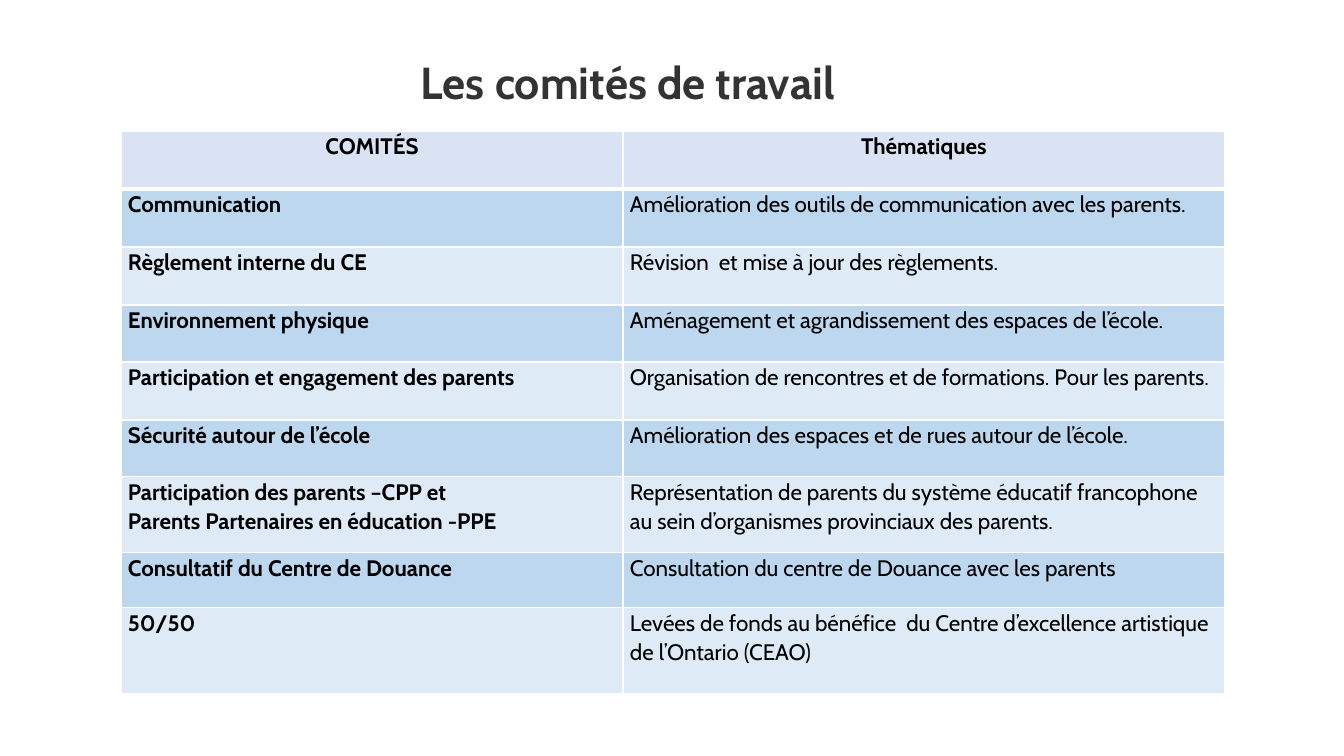
import pptx
import pptx.util
import pptx.dml.color
import pptx.enum.text
import pptx.oxml
import pptx.oxml.ns

PX = 9071.43  # EMU in one px, 100.8 px to the inch
ALIGN = pptx.enum.text.PP_ALIGN


def px(n):
    return pptx.util.Emu(round(n * PX))


def color(hex_value):
    return pptx.dml.color.RGBColor.from_string(hex_value)


class Deck:
    font = "Cabin"
    text_color = "000000"
    cell_size = 16
    line_spacing = 1.07
    cell_margin = 7
    border_color = "FFFFFF"

    def __init__(self, width, height):
        self.prs = pptx.Presentation()
        self.prs.slide_width, self.prs.slide_height = px(width), px(height)
        self.slide = self.prs.slides.add_slide(self.prs.slide_layouts[6])

    def run(self, p, text, size, bold, hex_value):
        r = p.add_run()
        r.text = text
        r.font.name = self.font
        r.font.size = pptx.util.Pt(size)
        r.font.bold = bold
        r.font.color.rgb = color(hex_value)

    def title(self, x, y, w, h, text, size, hex_value):
        sp = self.slide.shapes.add_textbox(px(x), px(y), px(w), px(h))
        tf = sp.text_frame
        tf.word_wrap = True
        tf.auto_size = pptx.enum.text.MSO_AUTO_SIZE.SHAPE_TO_FIT_TEXT
        p = tf.paragraphs[0]
        p.alignment = ALIGN.CENTER
        self.run(p, text, size, True, hex_value)

    def borders(self, cell, widths):
        tc_pr = cell._tc.get_or_add_tcPr()
        for i, (side, width) in enumerate(widths.items()):
            tc_pr.insert(i, pptx.oxml.parse_xml(
                f'<a:ln{side} {pptx.oxml.ns.nsdecls("a")} w="{pptx.util.Pt(width)}">'
                f'<a:solidFill><a:srgbClr val="{self.border_color}"/></a:solidFill>'
                f'</a:ln{side}>'))

    def cell(self, cell, text, fill, bold, align, top, bottom):
        cell.fill.solid()
        cell.fill.fore_color.rgb = color(fill)
        cell.margin_left = cell.margin_right = px(self.cell_margin)
        cell.margin_top = cell.margin_bottom = 0
        self.borders(cell, {"L": 1, "R": 1, "T": top, "B": bottom})
        tf = cell.text_frame
        for i, line in enumerate(text.split("\n")):
            p = tf.add_paragraph() if i else tf.paragraphs[0]
            p.alignment = align
            p.line_spacing = self.line_spacing
            self.run(p, line, self.cell_size, bold, self.text_color)

    def table(self, x, y, col_widths, row_heights, rows, header_fill, band_fills):
        frame = self.slide.shapes.add_table(
            len(rows), len(col_widths), px(x), px(y),
            px(sum(col_widths)), px(sum(row_heights)))
        table = frame.table
        for column, width in zip(table.columns, col_widths):
            column.width = px(width)
        for i, (texts, height) in enumerate(zip(rows, row_heights)):
            table.rows[i].height = px(height)
            header = i == 0
            fill = header_fill if header else band_fills[(i - 1) % 2]
            align = ALIGN.CENTER if header else ALIGN.LEFT
            for j, text in enumerate(texts):
                self.cell(table.cell(i, j), text, fill, header or j == 0, align,
                          top=3 if i == 1 else 1, bottom=3 if header else 1)


COMMITTEES = [
    ("COMITÉS", "Thématiques"),
    ("Communication", "Amélioration des outils de communication avec les parents."),
    ("Règlement interne du CE", "Révision  et mise à jour des règlements."),
    ("Environnement physique", "Aménagement et agrandissement des espaces de l’école."),
    ("Participation et engagement des parents",
     "Organisation de rencontres et de formations. Pour les parents."),
    ("Sécurité autour de l’école",
     "Amélioration des espaces et de rues autour de l’école."),
    ("Participation des parents –CPP et\nParents Partenaires en éducation -PPE",
     "Représentation de parents du système éducatif francophone "
     "au sein d’organismes provinciaux des parents."),
    ("Consultatif du Centre de Douance",
     "Consultation du centre de Douance avec les parents"),
    ("50/50",
     "Levées de fonds au bénéfice  du Centre d’excellence artistique "
     "de l’Ontario (CEAO)"),
]
ROW_HEIGHTS = [58, 58, 58, 57, 58, 57, 76, 55, 86]


def main():
    deck = Deck(1344, 756)

    # Title
    deck.title(97, 50, 1062, 64, "Les comités de travail", 32, "333333")

    # Committees and their themes
    deck.table(121, 131, [502, 602], ROW_HEIGHTS, COMMITTEES,
               "DAE3F3", ["BDD7EE", "DEEBF7"])

    deck.prs.save("out.pptx")


if __name__ == "__main__":
    main()
